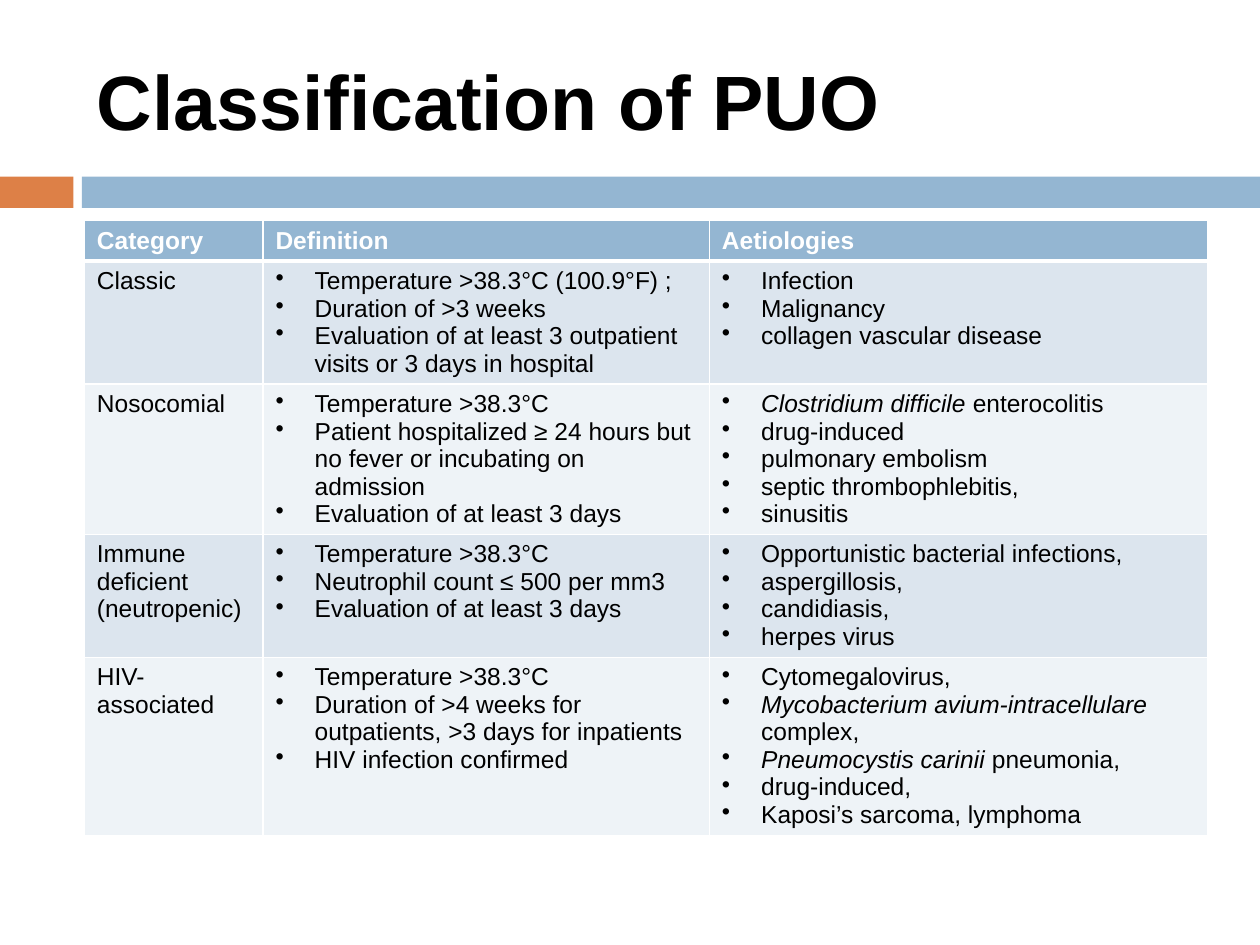
import pptx
import pptx.util
import pptx.dml.color
import pptx.enum.shapes
import pptx.enum.text
import pptx.oxml
import pptx.oxml.ns
from pptx.util import Cm, Pt

RGBColor = pptx.dml.color.RGBColor
BLUE = RGBColor(0x94, 0xB6, 0xD2)
ORANGE = RGBColor(0xDD, 0x80, 0x47)
BAND_DARK = RGBColor(0xDC, 0xE5, 0xEE)
BAND_LIGHT = RGBColor(0xEE, 0xF3, 0xF7)
WHITE = RGBColor(0xFF, 0xFF, 0xFF)
BLACK = RGBColor(0, 0, 0)
FONT = "Arial"

# Content: a tuple as list item holds an italic part and a plain part
TITLE = "Classification of PUO"
HEADINGS = ["Category", "Definition", "Aetiologies"]
CATEGORIES = [
    ("Classic",
     ["Temperature >38.3°C (100.9°F) ;", "Duration of >3 weeks",
      "Evaluation of at least 3 outpatient visits or 3 days in hospital"],
     ["Infection", "Malignancy", "collagen vascular disease"]),
    ("Nosocomial",
     ["Temperature >38.3°C",
      "Patient hospitalized ≥ 24 hours but no fever or incubating on admission",
      "Evaluation of at least 3 days"],
     [("Clostridium difficile ", "enterocolitis"), "drug-induced",
      "pulmonary embolism", "septic thrombophlebitis,", "sinusitis"]),
    ("Immune deficient (neutropenic)",
     ["Temperature >38.3°C", "Neutrophil count ≤ 500 per mm3",
      "Evaluation of at least 3 days"],
     ["Opportunistic bacterial infections,", "aspergillosis,", "candidiasis,",
      "herpes virus"]),
    ("HIV-associated",
     ["Temperature >38.3°C",
      "Duration of >4 weeks for outpatients, >3 days for inpatients",
      "HIV infection confirmed"],
     ["Cytomegalovirus,", ("Mycobacterium avium-intracellulare ", "complex,"),
      ("Pneumocystis carinii ", "pneumonia,"), "drug-induced,",
      "Kaposi’s sarcoma, lymphoma"]),
]

# Layout in centimetres
LEFT, TABLE_TOP = 1.7, 4.45
COLUMN_WIDTHS = [3.6, 9.0, 10.05]
ROW_HEIGHTS = [0.79, 2.48, 3.02, 2.48, 3.59]
BAR_TOP, BAR_HEIGHT = 3.56, 0.63
BARS = [(0, 1.48, ORANGE), (1.65, 23.75, BLUE)]


def add_bar(slide, left, width, color):
    bar = slide.shapes.add_shape(
        pptx.enum.shapes.MSO_SHAPE.RECTANGLE,
        Cm(left), Cm(BAR_TOP), Cm(width), Cm(BAR_HEIGHT))
    bar.shadow.inherit = False
    bar.fill.solid()
    bar.fill.fore_color.rgb = color
    bar.line.fill.background()


def style_font(font, size, color, bold):
    font.name = FONT
    font.size = Pt(size)
    font.color.rgb = color
    font.bold = bold


def add_bullet(paragraph):
    properties = paragraph._p.get_or_add_pPr()
    properties.set("marL", str(Cm(0.79)))
    properties.set("indent", str(-Cm(0.79)))
    bullet = pptx.oxml.parse_xml(
        f'<a:buChar {pptx.oxml.ns.nsdecls("a")} char="•"/>')
    properties.append(bullet)


def set_borders(cell, top, bottom):
    properties = cell._tc.get_or_add_tcPr()
    widths = [("lnL", 1), ("lnR", 1), ("lnT", top), ("lnB", bottom)]
    for position, (side, width) in enumerate(widths):
        properties.insert(position, pptx.oxml.parse_xml(
            f'<a:{side} {pptx.oxml.ns.nsdecls("a")} w="{Pt(width)}">'
            f'<a:solidFill><a:srgbClr val="{WHITE}"/></a:solidFill></a:{side}>'))


def fill_cell(cell, content, color, background, bold):
    cell.fill.solid()
    cell.fill.fore_color.rgb = background
    bulleted = isinstance(content, list)
    for number, item in enumerate(content if bulleted else [content]):
        frame = cell.text_frame
        paragraph = frame.add_paragraph() if number else frame.paragraphs[0]
        if bulleted:
            add_bullet(paragraph)
        style_font(paragraph.font, 14, color, bold)
        if isinstance(item, tuple):
            for text, italic in zip(item, (True, False)):
                run = paragraph.add_run()
                run.text = text
                run.font.italic = italic
        else:
            paragraph.add_run().text = item


def main():
    deck = pptx.Presentation()
    deck.slide_width, deck.slide_height = Cm(25.4), Cm(19.05)
    slide = deck.slides.add_slide(deck.slide_layouts[5])

    # Bars under the title
    for left, width, color in BARS:
        add_bar(slide, left, width, color)

    # Title
    title = slide.shapes.title
    title.left, title.top = Cm(LEFT), Cm(0.64)
    title.width, title.height = Cm(sum(COLUMN_WIDTHS)), Cm(2.75)
    title.text_frame.text = TITLE
    title.text_frame.vertical_anchor = pptx.enum.text.MSO_ANCHOR.MIDDLE
    heading = title.text_frame.paragraphs[0]
    heading.alignment = pptx.enum.text.PP_ALIGN.LEFT
    style_font(heading.font, 44, BLACK, True)

    # Classification table
    rows = [HEADINGS, *CATEGORIES]
    table = slide.shapes.add_table(
        len(rows), len(HEADINGS), Cm(LEFT), Cm(TABLE_TOP),
        Cm(sum(COLUMN_WIDTHS)), Cm(sum(ROW_HEIGHTS))).table
    for column, width in zip(table.columns, COLUMN_WIDTHS):
        column.width = Cm(width)
    for index, (contents, height) in enumerate(zip(rows, ROW_HEIGHTS)):
        table.rows[index].height = Cm(height)
        header = index == 0
        band = BAND_DARK if index % 2 else BAND_LIGHT
        for cell, content in zip(table.rows[index].cells, contents):
            fill_cell(cell, content, WHITE if header else BLACK,
                      BLUE if header else band, header)
            set_borders(cell, 3 if index == 1 else 1, 3 if header else 1)

    deck.save("out.pptx")


if __name__ == "__main__":
    main()
